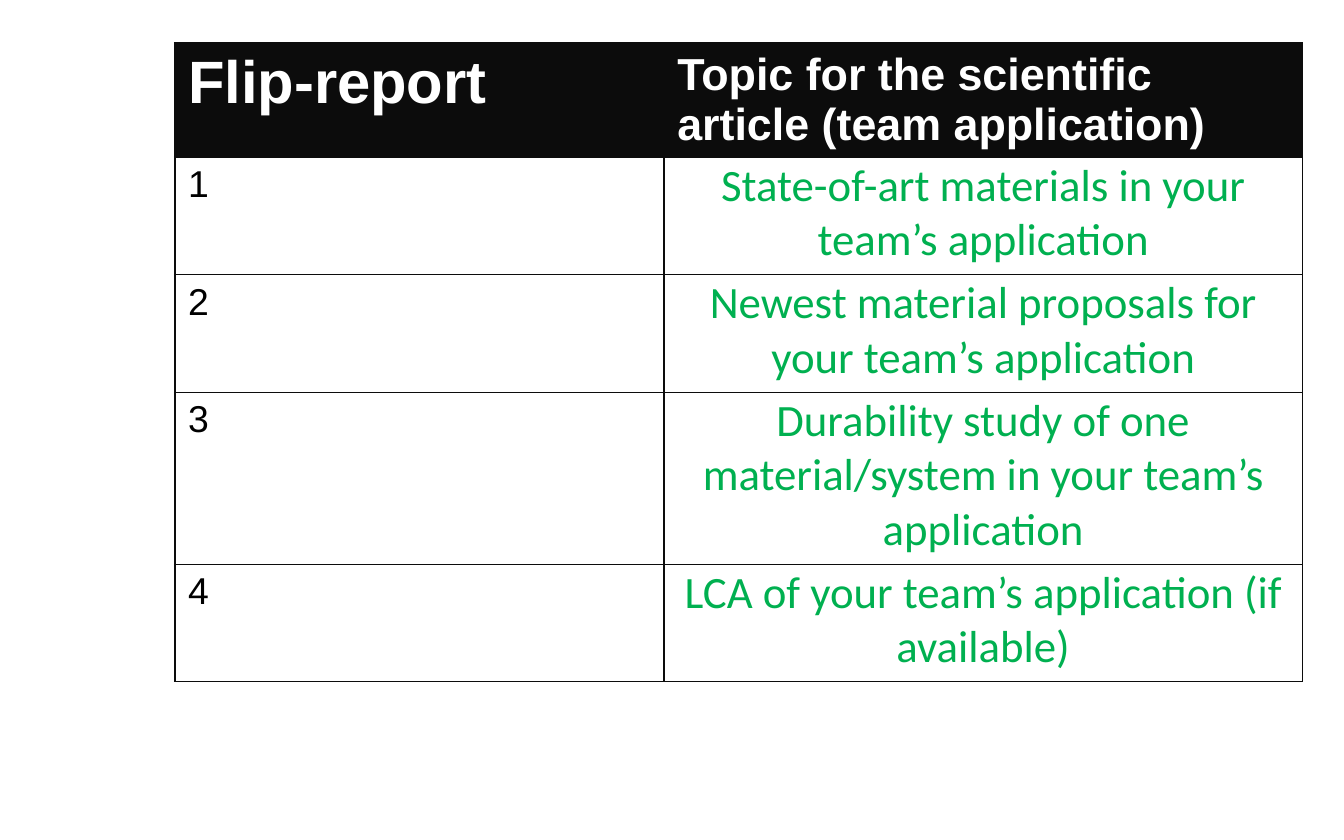
from dataclasses import dataclass

from lxml.etree import SubElement
from pptx import Presentation
from pptx.dml.color import RGBColor as Rgb
from pptx.enum.text import MSO_ANCHOR as Anchor, PP_ALIGN as Align
from pptx.oxml.ns import qn
from pptx.util import Inches, Pt


@dataclass(frozen=True)
class Theme:
    dark: str = "0C0C0C"
    white: str = "FFFFFF"
    black: str = "000000"
    green: str = "00B050"
    sans: str = "Arial"
    body: str = "Calibri"
    head: int = 32
    text: int = 24
    mark: int = 20
    thick: float = 1
    thin: float = 0.5


class Deck:
    def __init__(self, theme, wide, high):
        self.theme = theme
        self.prs = Presentation()
        self.prs.slide_width = Inches(wide)
        self.prs.slide_height = Inches(high)
        self.slide = self.prs.slides.add_slide(self.prs.slide_layouts[6])

    def table(self, left, top, cols, rows):
        """Add a plain table; all lengths are shares of the slide's size."""
        wide, high = self.prs.slide_width, self.prs.slide_height
        frame = self.slide.shapes.add_table(
            len(rows), len(cols), int(left * wide), int(top * high),
            int(sum(cols) * wide), int(sum(rows) * high))
        grid = frame.table
        grid.horz_banding = False
        for col, share in zip(grid.columns, cols):
            col.width = int(share * wide)
        for row, share in zip(grid.rows, rows):
            row.height = int(share * high)
        return grid

    def edge(self, cell, flat):
        """Draw the four borders; flat is the width of top and bottom."""
        props = cell._tc.get_or_add_tcPr()
        sides = {"L": self.theme.thick, "R": self.theme.thick,
                 "T": flat, "B": flat}
        for side, width in sides.items():
            line = SubElement(props, qn(f"a:ln{side}"), w=str(Pt(width)))
            fill = SubElement(line, qn("a:solidFill"))
            SubElement(fill, qn("a:srgbClr"), val=self.theme.dark)

    def cell(self, cell, text, size, color, font, fill, flat, bold=False):
        self.edge(cell, flat)
        cell.fill.solid()
        cell.fill.fore_color.rgb = Rgb.from_string(fill)
        para = cell.text_frame.paragraphs[0]
        para.text = text
        para.font.size = Pt(size)
        para.font.name = font
        para.font.bold = bold
        para.font.color.rgb = Rgb.from_string(color)

    def header(self, cell, text, size):
        look = self.theme
        self.cell(cell, text, size, look.white, look.sans, look.dark,
                  look.thick, bold=True)

    def number(self, cell, text):
        look = self.theme
        self.cell(cell, text, look.mark, look.black, look.sans, look.white,
                  look.thin)

    def topic(self, cell, text, anchor):
        look = self.theme
        self.cell(cell, text, look.text, look.green, look.body, look.white,
                  look.thin)
        cell.text_frame.paragraphs[0].alignment = Align.CENTER
        cell.vertical_anchor = anchor
        cell.margin_left = cell.margin_right = cell.margin_top = Inches(0.01)
        cell.margin_bottom = Inches(0.05)


TOPICS = [
    ("State-of-art materials in your team’s application", Anchor.MIDDLE),
    ("Newest material proposals for your team’s application", Anchor.MIDDLE),
    ("Durability study of one material/system in your team’s application",
     Anchor.BOTTOM),
    ("LCA of your team’s application (if available)", Anchor.BOTTOM),
]


def main():
    wide, high = 10, 6.25
    theme = Theme()
    deck = Deck(theme, wide, high)
    cols = [size / wide for size in (3.64, 4.75)]
    rows = [size / high for size in (0.85, 0.87, 0.87, 1.27, 0.87)]
    grid = deck.table(1.3 / wide, 0.32 / high, cols, rows)

    deck.header(grid.cell(0, 0), "Flip-report", theme.head)
    deck.header(grid.cell(0, 1),
                "Topic for the scientific article (team application)",
                theme.text)
    for row, (text, anchor) in enumerate(TOPICS, 1):
        deck.number(grid.cell(row, 0), str(row))
        deck.topic(grid.cell(row, 1), text, anchor)
    deck.prs.save("out.pptx")


if __name__ == "__main__":
    main()
